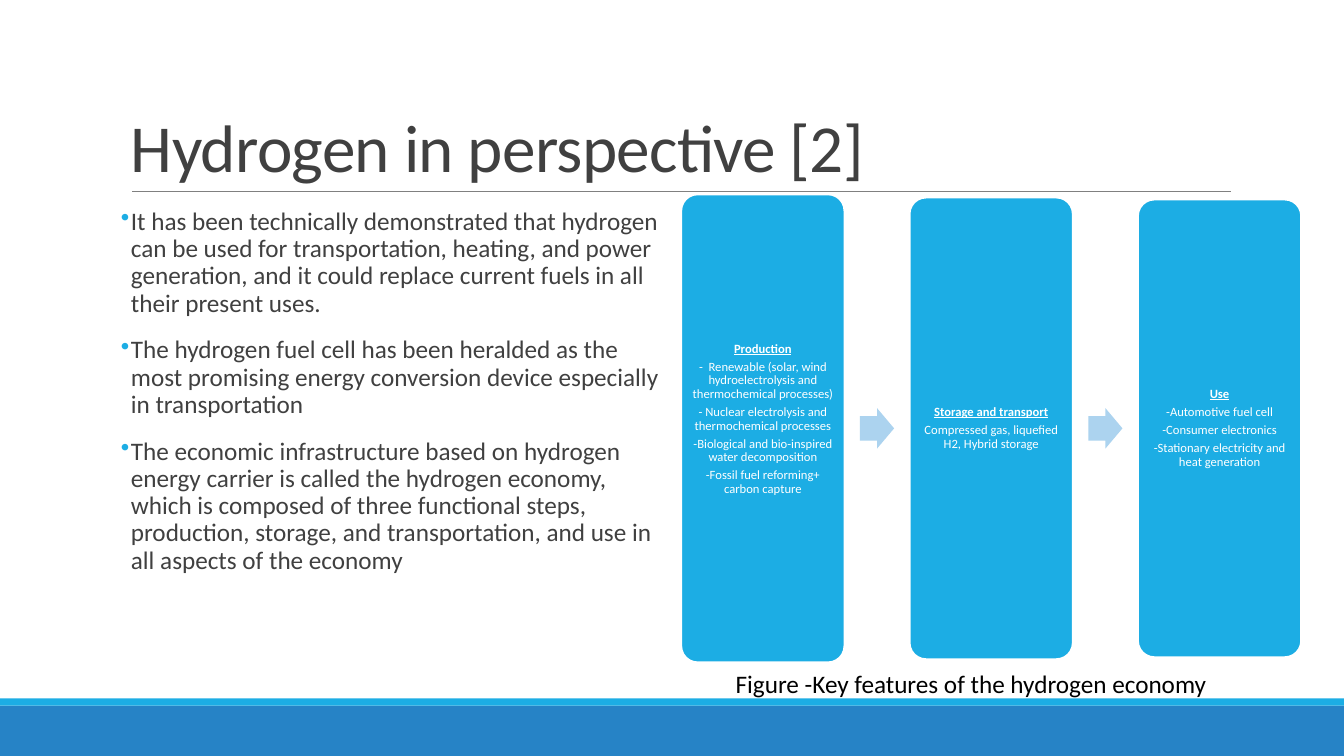
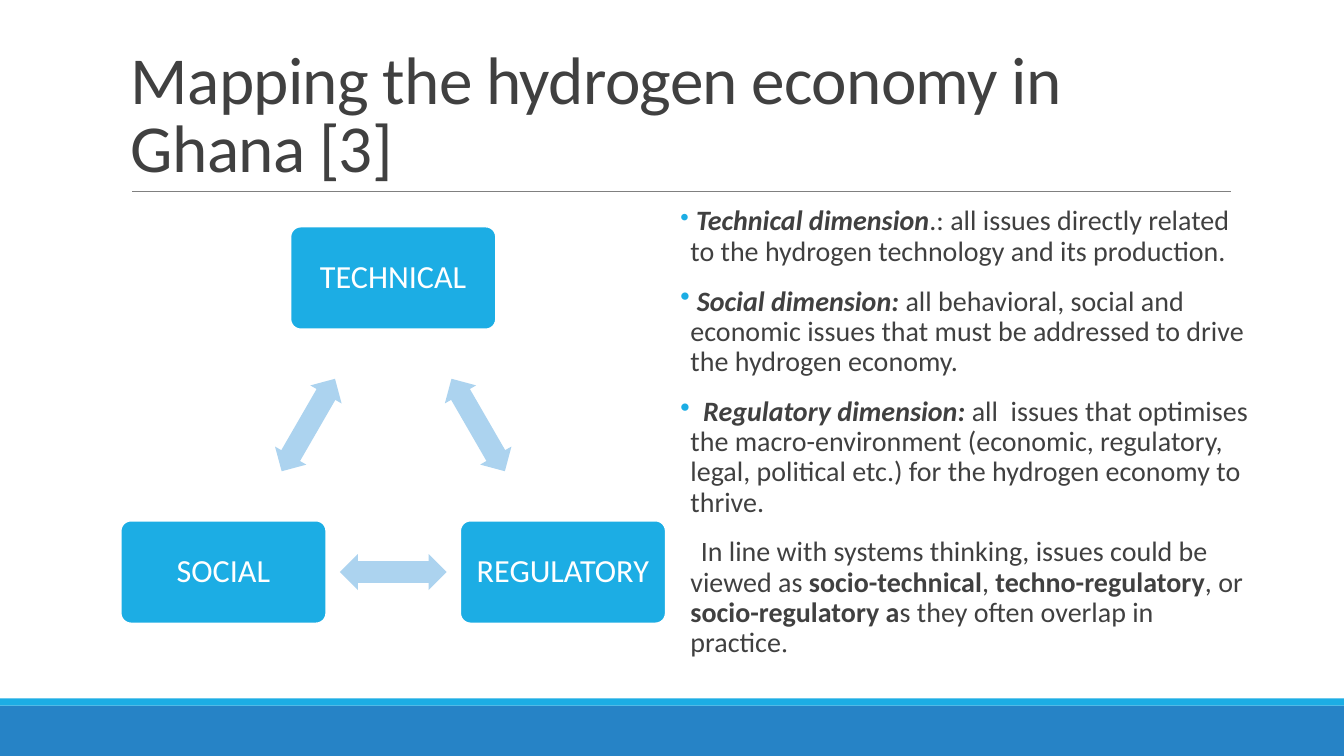
from math import cos, radians, sin

from lxml import etree
from pptx import Presentation
from pptx.dml.color import RGBColor
from pptx.enum.shapes import MSO_CONNECTOR, MSO_SHAPE
from pptx.enum.text import MSO_ANCHOR, PP_ALIGN
from pptx.oxml.ns import qn
from pptx.util import Cm, Pt

RECT = MSO_SHAPE.RECTANGLE
ROUND = MSO_SHAPE.ROUNDED_RECTANGLE
RIGHT = MSO_SHAPE.RIGHT_ARROW
DOUBLE = MSO_SHAPE.LEFT_RIGHT_ARROW
STRAIGHT = MSO_CONNECTOR.STRAIGHT
LEFT, CENTER = PP_ALIGN.LEFT, PP_ALIGN.CENTER
TOP, MIDDLE, BOTTOM = MSO_ANCHOR.TOP, MSO_ANCHOR.MIDDLE, MSO_ANCHOR.BOTTOM

WHITE = RGBColor(0xFF, 0xFF, 0xFF)
BLACK = RGBColor(0x00, 0x00, 0x00)
DARK = RGBColor(0x40, 0x40, 0x40)
GRAY = RGBColor(0x80, 0x80, 0x80)
BLUE = RGBColor(0x26, 0x83, 0xC6)
CYAN = RGBColor(0x1C, 0xAD, 0xE4)
PALE = RGBColor(0xAC, 0xD3, 0xEF)

FONT = "Calibri"
WIDE, HIGH = 33.87, 19.05
BOLD = {"bold": True}
LEAD = {"bold": True, "italic": True}
HEAD = {"bold": True, "underline": True}

USES = [
    "It has been technically demonstrated that hydrogen can be used for "
    "transportation, heating, and power generation, and it could replace "
    "current fuels in all their present uses.",
    "The hydrogen fuel cell has been heralded as the most promising energy "
    "conversion device especially in transportation",
    "The economic infrastructure based on hydrogen energy carrier is called "
    "the hydrogen economy, which is composed of three functional steps, "
    "production, storage, and transportation, and use in all aspects of the "
    "economy",
]

# Each step: height, extra space below the text, heading, lines
STEPS = [
    (11.79, 0.46, "Production", [
        "-  Renewable (solar, wind hydroelectrolysis and thermochemical processes)",
        "- Nuclear electrolysis and thermochemical processes",
        "-Biological and bio-inspired water decomposition",
        "-Fossil fuel reforming+ carbon capture"]),
    (11.63, 0, "Storage and transport", [
        "Compressed gas, liquefied H2, Hybrid storage"]),
    (11.53, 0, "Use", [
        "-Automotive fuel cell",
        "-Consumer electronics",
        "-Stationary electricity and heat generation"]),
]

SIDES = ["TECHNICAL", "REGULATORY", "SOCIAL"]

NOTES = [
    [(" ", {"size": Pt(18)}), ("Technical dimension", LEAD),
     (".: all issues directly related to the hydrogen technology and its "
      "production.", {})],
    [(" ", {}), ("Social dimension:", LEAD),
     (" all behavioral, social and economic issues that must be addressed to "
      "drive the hydrogen economy.", {})],
    [("  ", {}), ("Regulatory dimension: ", LEAD),
     ("all  issues that optimises the macro-environment (economic, "
      "regulatory, legal, political etc.) for the hydrogen economy to "
      "thrive.", {})],
    [(" In line with systems thinking, issues could be viewed as ", {}),
     ("socio-technical", BOLD), (", ", {}), ("techno-regulatory", BOLD),
     (", or ", {}), ("socio-regulatory a", BOLD),
     ("s they often overlap in practice", {}),
     (".", {"name": "Times New Roman"})],
]


def mark(para, sign):
    """Give a paragraph a hanging bullet."""
    props = para._p.get_or_add_pPr()
    props.set("marL", str(Cm(0.25)))
    props.set("indent", str(-Cm(0.25)))
    tint = etree.SubElement(props, qn("a:buClr"))
    etree.SubElement(tint, qn("a:srgbClr")).set("val", str(CYAN))
    etree.SubElement(props, qn("a:buChar")).set("char", sign)


def write(shape, paras, size=18, color=DARK, align=LEFT, anchor=TOP,
          pad=(0.25, 0.13, 0.25, 0.13), line=1.0, before=0, after=0,
          track=0, signs=""):
    """Fill a shape; a paragraph is a string or a list of (text, font) runs."""
    frame = shape.text_frame
    frame.word_wrap = True
    frame.vertical_anchor = anchor
    (frame.margin_left, frame.margin_top,
     frame.margin_right, frame.margin_bottom) = map(Cm, pad)
    for n, runs in enumerate(paras):
        para = frame.add_paragraph() if n else frame.paragraphs[0]
        para.alignment = align
        para.line_spacing = line
        para.space_before, para.space_after = Pt(before), Pt(after)
        if signs:
            mark(para, signs[n])
        for words, style in [(runs, {})] if isinstance(runs, str) else runs:
            run = para.add_run()
            run.text = words
            font = run.font
            font.name, font.size = FONT, Pt(size)
            font.color.rgb = color
            for key, value in style.items():
                setattr(font, key, value)
            if track:
                run._r.get_or_add_rPr().set("spc", str(track))


def label(slide, box, paras, **form):
    write(slide.shapes.add_textbox(*map(Cm, box)), paras, **form)


def draw(slide, kind, box, fill, edge=None, adjust=()):
    shape = slide.shapes.add_shape(kind, *map(Cm, box))
    shape.shadow.inherit = False
    shape.fill.solid()
    shape.fill.fore_color.rgb = fill
    if edge is None:
        shape.line.fill.background()
    else:
        shape.line.color.rgb = edge
        shape.line.width = Pt(1.25)
    for n, value in enumerate(adjust):
        shape.adjustments[n] = value
    return shape


def mid(x, y, wide, high):
    """Return the box of a given size centred on a point."""
    return x - wide / 2, y - high / 2, wide, high


def card(slide, box, paras, size, pad):
    shape = draw(slide, ROUND, box, CYAN, WHITE, [0.1])
    write(shape, paras, size=size, color=WHITE, align=CENTER, anchor=MIDDLE,
          pad=pad, line=0.9, after=0.35 * size)


def arrow(slide, kind, box, turn=0):
    draw(slide, kind, box, PALE, adjust=[0.6, 0.5]).rotation = turn


def start(deck, title):
    """Add a slide with the shared bands, rule and title."""
    slide = deck.slides.add_slide(deck.slide_layouts[6])
    draw(slide, RECT, (0, 17.78, WIDE, 1.27), BLUE)
    draw(slide, RECT, (0, 17.6, WIDE, 0.18), CYAN)
    rule = slide.shapes.add_connector(
        STRAIGHT, Cm(3.33), Cm(4.83), Cm(31.01), Cm(4.83))
    rule.line.color.rgb = GRAY
    rule.line.width = Pt(0.5)
    etree.SubElement(rule._element.spPr, qn("a:effectLst"))
    label(slide, (3.05, 0.79, 27.94, 4.04), [title], size=48, anchor=BOTTOM,
          line=0.85, track=-50)
    return slide


def points(slide, box, paras, size, signs):
    label(slide, box, paras, size=size, pad=(0, 0.13, 0, 0.13), line=0.9,
          before=12, after=2, signs=signs)


def chain(slide, box):
    """Draw the steps side by side with an arrow in each gap."""
    left, top, wide, high = box
    broad = 4.11
    pitch = (wide - broad) / (len(STEPS) - 1)
    y = top + high / 2
    for n, (tall, extra, head, lines) in enumerate(STEPS):
        x = left + broad / 2 + n * pitch
        if n:
            arrow(slide, RIGHT, mid(x - pitch / 2, y, 0.86, 1.02))
        card(slide, mid(x, y, broad, tall), [[(head, HEAD)], *lines], 9,
             (0.1, 0.1, 0.1, 0.1 + extra))


def ring(slide, box):
    """Draw the sides as a triangle with an arrow on each edge."""
    left, top, wide, high = box
    broad, tall = 5.18, 2.59
    radius = (high - tall) / 1.5
    x, y = left + wide / 2, top + tall / 2 + radius
    step = 360 / len(SIDES)
    for n, name in enumerate(SIDES):
        angle = radians(n * step - 90)
        card(slide, mid(x + radius * cos(angle), y + radius * sin(angle),
                        broad, tall), [name], 23, (0.25,) * 4)
        angle += radians(step / 2)
        reach = radius * cos(radians(step / 2))
        arrow(slide, DOUBLE,
              mid(x + reach * cos(angle), y + reach * sin(angle), 2.69, 0.91),
              step / 2 + n * step)


def main():
    deck = Presentation()
    deck.slide_width, deck.slide_height = Cm(WIDE), Cm(HIGH)

    slide = start(deck, "Hydrogen in perspective [2]")
    points(slide, (3.05, 5.13, 13.72, 11.18), USES, 18, "•••")
    chain(slide, (17.17, 4.9, 15.62, 11.79))
    label(slide, (18.29, 16.71, 12.75, 1.02),
          ["Figure -Key features of the hydrogen economy"], color=BLACK)

    slide = start(deck, "Mapping the hydrogen economy in Ghana [3]")
    ring(slide, (3.05, 5.71, 13.72, 10))
    points(slide, (17.15, 5.08, 14.4, 12.95), NOTES, 20, "••• ")

    deck.save("out.pptx")


if __name__ == "__main__":
    main()
